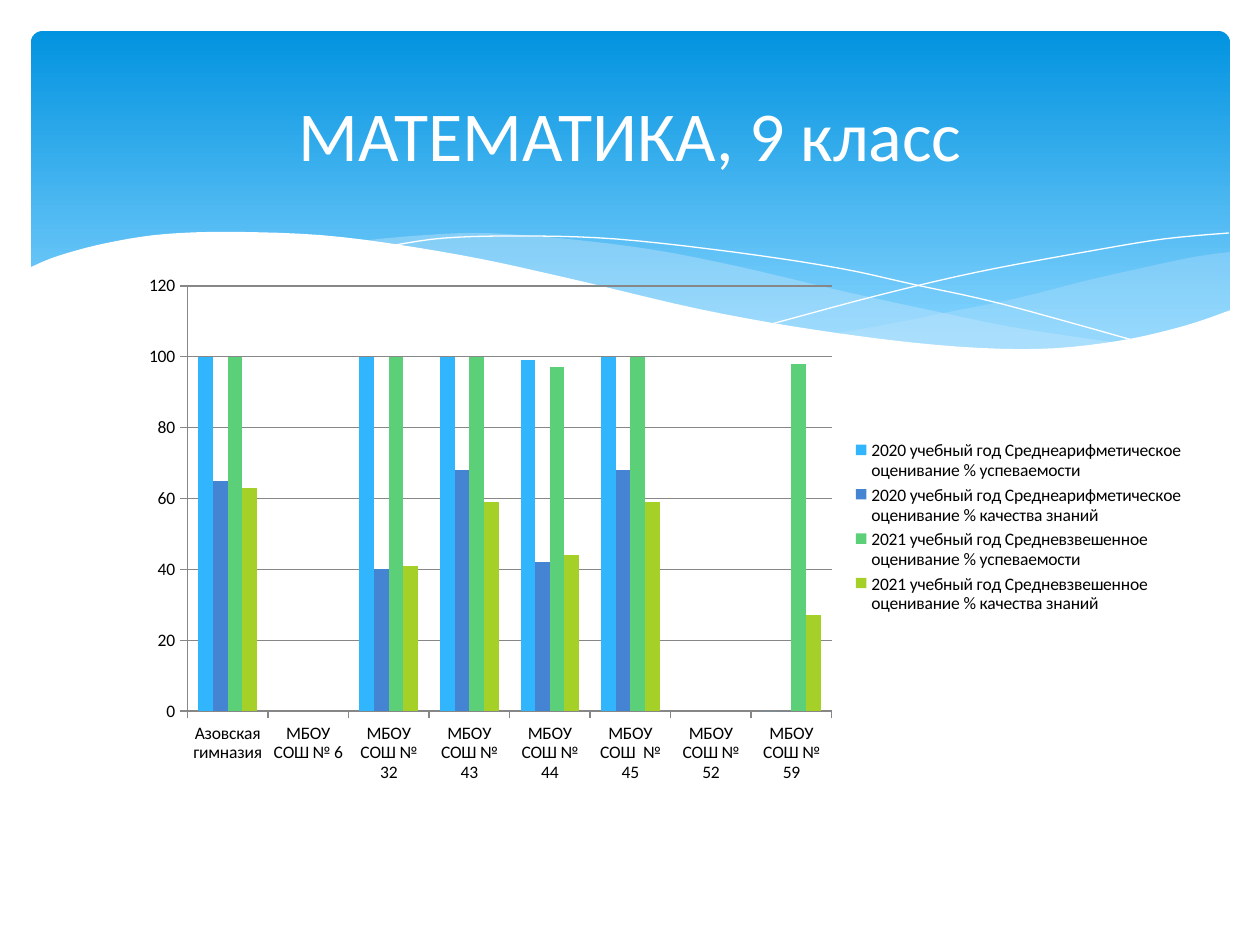
from itertools import product
from lxml import etree
from pptx import Presentation
from pptx.chart.data import CategoryChartData
from pptx.dml.color import RGBColor
from pptx.enum.chart import XL_CHART_TYPE, XL_LEGEND_POSITION, XL_TICK_MARK
from pptx.enum.shapes import MSO_SHAPE
from pptx.enum.text import MSO_ANCHOR, PP_ALIGN
from pptx.oxml import parse_xml
from pptx.oxml.ns import nsdecls, qn
from pptx.util import Pt

CLUSTERED = XL_CHART_TYPE.COLUMN_CLUSTERED
RIGHT = XL_LEGEND_POSITION.RIGHT
OUTSIDE, NO_TICK = XL_TICK_MARK.OUTSIDE, XL_TICK_MARK.NONE
ROUNDED = MSO_SHAPE.ROUNDED_RECTANGLE
MIDDLE, CENTER = MSO_ANCHOR.MIDDLE, PP_ALIGN.CENTER

TITLE = "МАТЕМАТИКА, 9 класс"
SCHOOLS = ["Азовская гимназия", "МБОУ СОШ № 6", "МБОУ СОШ № 32", "МБОУ СОШ № 43",
           "МБОУ СОШ № 44", "МБОУ СОШ  № 45", "МБОУ СОШ № 52", "МБОУ СОШ № 59"]
YEARS = ["2020 учебный год Среднеарифметическое", "2021 учебный год Средневзвешенное"]
MEASURES = ["оценивание % успеваемости", "оценивание % качества знаний"]
RESULTS = [
    [100, None, 100, 100, 99, 100, None, 0],
    [65, None, 40, 68, 42, 68, None, 0],
    [100, None, 100, 100, 97, 100, None, 98],
    [63, None, 41, 59, 44, 59, None, 27],
]

THEME = {
    "font": "Calibri", "title_size": 40, "chart_size": 10,
    "white": "FFFFFF", "text": "000000", "axis": "878787", "band": "C6E7FC",
    "card": [(0, "0293E0"), (0.9, "83D3FE")],
    "series": ["31B6FD", "4584D3", "5BD078", "A5D028"],
}

SIZE = (1260, 945)
CARD = (31, 31, 1199, 340)
TITLE_BOX = (63, 47, 1134, 173)
CHART_BOX = (123, 265, 1074, 525)
PLOT = {"x": 0.06, "y": 0.04, "w": 0.6, "h": 0.81}

BANDS = [
    (29, [
        [(1230, 252), (1194, 257), (1142, 268), (1085, 281), (1014, 299), (949, 312),
         (890, 324), (833, 334)],
        [(833, 334), (906, 343), (984, 349), (1063, 349), (1130, 340), (1187, 326),
         (1230, 311)],
    ]),
    (40, [
        [(360, 241), (413, 236), (479, 233), (557, 238), (648, 249), (736, 266),
         (842, 291), (934, 311), (1017, 328), (1125, 344)],
        [(1125, 344), (1056, 350), (989, 350), (910, 345), (819, 333), (713, 312),
         (566, 280), (483, 261), (407, 247), (360, 241)],
    ]),
]
THREADS = [
    [(389, 246), (445, 238), (524, 236), (616, 239), (733, 252), (838, 268),
     (916, 285), (1002, 304), (1143, 343)],
    [(772, 324), (876, 296), (978, 272), (1091, 251), (1164, 239), (1229, 233)],
]
WAVE = [(29, 268), (58, 256), (107, 243), (166, 234), (243, 232), (341, 237),
        (460, 255), (563, 277), (699, 309), (816, 330), (937, 345), (1037, 349),
        (1118, 341), (1184, 326), (1231, 310)]
WAVE_BASE = [(1231, 415), (29, 415)]

EMU = 914400 // 126
STEPS = 5


def px(*values):
    return [v * EMU for v in values]


def rgb(name):
    return RGBColor.from_string(THEME.get(name, name))


def paint(fill, color, alpha=100):
    fill.solid()
    fill.fore_color.rgb = rgb(color)
    if alpha < 100:
        clr = fill._xPr.find(qn("a:solidFill"))[0]
        etree.SubElement(clr, qn("a:alpha"), val=str(alpha * 1000))


def set_all(obj, values):
    for name, value in values.items():
        setattr(obj, name, value)


def smooth(points):
    ends = [points[0], *points, points[-1]]
    curve = [points[0]]
    for a, b, c, d in zip(ends, ends[1:], ends[2:], ends[3:]):
        for t in (i / STEPS for i in range(1, STEPS + 1)):
            curve.append(tuple(
                (2 * q + (r - p) * t + (2 * p - 5 * q + 4 * r - s) * t ** 2
                 + (3 * q - p - 3 * r + s) * t ** 3) / 2
                for p, q, r, s in zip(a, b, c, d)))
    return curve


def add_path(s, points, close):
    pts = [tuple(round(v * EMU) for v in p) for p in points]
    builder = s.shapes.build_freeform(*pts[0], scale=1.0)
    builder.add_line_segments(pts[1:], close=close)
    sp = builder.convert_to_shape()
    sp.shadow.inherit = False
    return sp


def add_area(s, points, color, alpha=100):
    sp = add_path(s, points, True)
    paint(sp.fill, color, alpha)
    sp.line.fill.background()


def add_thread(s, points):
    sp = add_path(s, smooth(points), False)
    sp.fill.background()
    paint(sp.line.fill, "white")
    sp.line.width = 0


def add_backdrop(s):
    card = s.shapes.add_shape(ROUNDED, *px(*CARD))
    card.shadow.inherit = False
    card.adjustments[0] = 0.034
    card.line.fill.background()
    card.fill.gradient()
    card.fill.gradient_angle = 270
    for stop, (position, color) in zip(card.fill.gradient_stops, THEME["card"]):
        stop.position = position
        stop.color.rgb = rgb(color)
    for alpha, edges in BANDS:
        add_area(s, [p for edge in edges for p in smooth(edge)], "band", alpha)
    for points in THREADS:
        add_thread(s, points)
    add_area(s, smooth(WAVE) + WAVE_BASE, "white")


def add_results(s):
    data = CategoryChartData()
    data.categories = SCHOOLS
    for (year, measure), values in zip(product(YEARS, MEASURES), RESULTS):
        data.add_series(f"{year} {measure}", values)
    chart = s.shapes.add_chart(CLUSTERED, *px(*CHART_BOX), data).chart
    chart.has_title = False
    set_all(chart.font, {"name": THEME["font"], "size": Pt(THEME["chart_size"])})
    chart.font.color.rgb = rgb("text")
    chart.has_legend = True
    set_all(chart.legend, {"position": RIGHT, "include_in_layout": False})
    plot = chart.plots[0]
    set_all(plot, {"gap_width": 150, "overlap": 0, "vary_by_categories": False})
    for series, color in zip(plot.series, THEME["series"]):
        paint(series.format.fill, color)
    for axis in (chart.category_axis, chart.value_axis):
        set_all(axis, {"major_tick_mark": OUTSIDE, "minor_tick_mark": NO_TICK})
        paint(axis.format.line.fill, "axis")
    set_all(chart.value_axis, {"minimum_scale": 0, "maximum_scale": 120,
                               "major_unit": 20, "has_major_gridlines": True})
    paint(chart.value_axis.major_gridlines.format.line.fill, "axis")
    area = chart.element.find(".//" + qn("c:plotArea"))
    for old in area.findall(qn("c:layout")):
        area.remove(old)
    modes = '<c:layoutTarget val="inner"/><c:xMode val="edge"/><c:yMode val="edge"/>'
    box = "".join(f'<c:{k} val="{v}"/>' for k, v in PLOT.items())
    area.insert(0, parse_xml(f'<c:layout {nsdecls("c")}><c:manualLayout>'
                             f'{modes}{box}</c:manualLayout></c:layout>'))


def add_title(s):
    sp = s.shapes.title
    s.shapes.element.append(sp.element)
    set_all(sp, dict(zip(("left", "top", "width", "height"), px(*TITLE_BOX))))
    tf = sp.text_frame
    set_all(tf, {"vertical_anchor": MIDDLE, "word_wrap": True})
    p = tf.paragraphs[0]
    p.alignment = CENTER
    r = p.add_run()
    r.text = TITLE
    set_all(r.font, {"name": THEME["font"], "size": Pt(THEME["title_size"])})
    r.font.color.rgb = rgb("white")


def main():
    prs = Presentation()
    prs.slide_width, prs.slide_height = px(*SIZE)
    s = prs.slides.add_slide(prs.slide_layouts[5])
    add_backdrop(s)
    add_results(s)
    add_title(s)
    prs.save("out.pptx")


if __name__ == "__main__":
    main()
